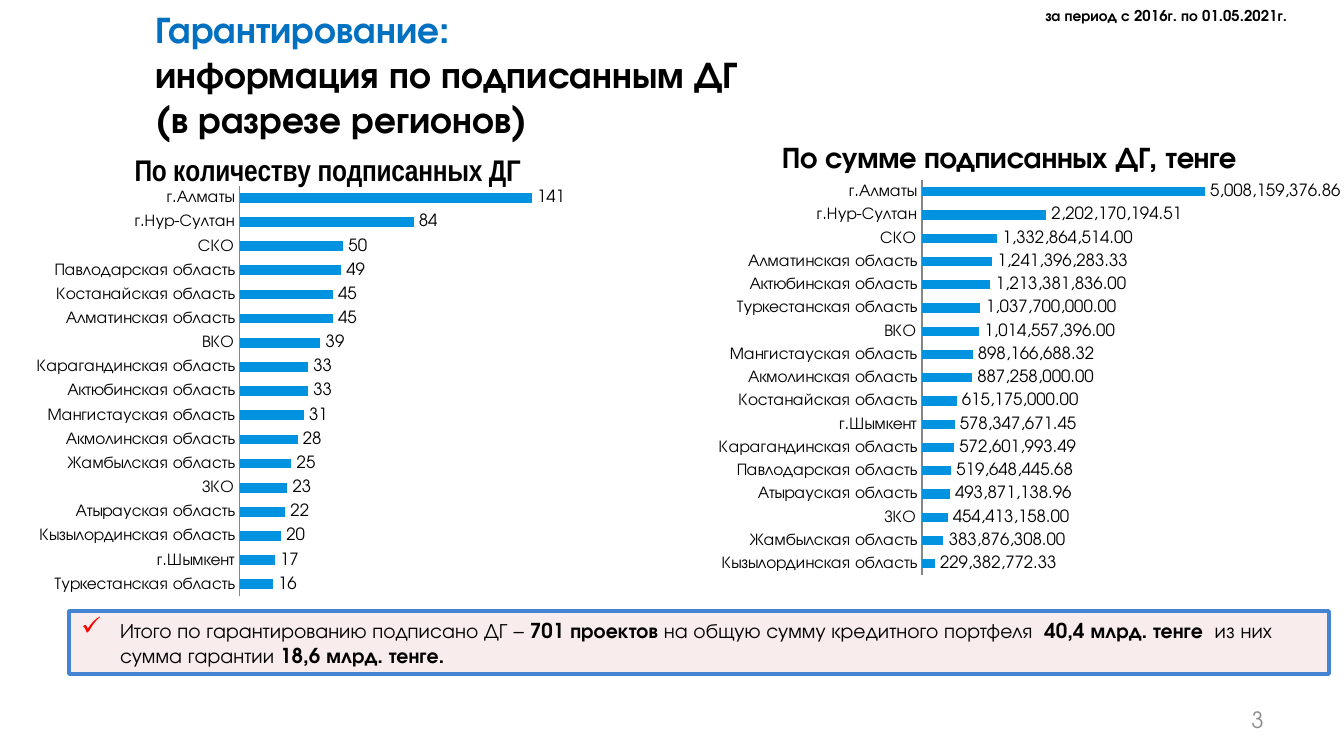
"""Build the slide on signed guarantee contracts by region."""
from lxml import etree
from pptx import Presentation
from pptx.chart.data import CategoryChartData as Data
from pptx.dml.color import RGBColor as RGB
from pptx.enum.chart import XL_CHART_TYPE as Kind, XL_LABEL_POSITION as Spot, XL_TICK_MARK as Tick
from pptx.enum.shapes import MSO_SHAPE as Form
from pptx.enum.text import MSO_ANCHOR as Anchor, PP_ALIGN as Align
from pptx.oxml import parse_xml
from pptx.oxml.ns import nsdecls, qn
from pptx.util import Pt

PX = 914400 / 134.4
FACE = "TeX Gyre Adventor"
HUES = {"text": "000000", "head": "0070C0", "bar": "0293E0", "axis": "868686",
        "fill": "F2DCDB", "edge": "4584D3", "tick": "FF0000", "page": "8C8C8C"}


def style(font, size, hue="text", bold=None, face=FACE):
    font.size, font.name, font.bold = Pt(size), face, bold
    font.color.rgb = RGB.from_string(HUES[hue])


def place(node, x, y, w=None, h=None):
    tags = '<c:layoutTarget val="inner"/>' if w else ""
    tags += '<c:xMode val="edge"/><c:yMode val="edge"/>'
    for tag, val in zip("xywh", (x, y, w, h)):
        if val is not None:
            tags += f'<c:{tag} val="{val}"/>'
    for old in node.findall(qn("c:layout")):
        node.remove(old)
    new = parse_xml(f'<c:layout {nsdecls("c")}><c:manualLayout>{tags}</c:manualLayout></c:layout>')
    text = node.find(qn("c:tx"))
    node.insert(0 if text is None else 1, new)


deck = Presentation()
deck.slide_width, deck.slide_height = int(1344 * PX), int(756 * PX)
slide = deck.slides.add_slide(deck.slide_layouts[6])
shapes = slide.shapes

page = shapes.add_textbox(*[int(n * PX) for n in (964, 700, 313, 40)]).text_frame
page.word_wrap, page.vertical_anchor = True, Anchor.MIDDLE
par = page.paragraphs[0]
par.text, par.alignment = "3", Align.RIGHT
style(par.font, 12, "page")

title = shapes.add_textbox(*[int(n * PX) for n in (142, 0, 1011, 86)]).text_frame
title.word_wrap = True
par = title.paragraphs[0]
style(par.font, 20, bold=True)
run = par.add_run()
run.text = "Гарантирование:"
run.font.color.rgb = RGB.from_string(HUES["head"])
par.add_line_break()
par.add_run().text = "информация по подписанным ДГ"
par = title.add_paragraph()
par.text = "(в разрезе регионов)"
style(par.font, 20, bold=True)

total = shapes.add_shape(Form.RECTANGLE, *[int(n * PX) for n in (69, 611, 1260, 63)])
total.shadow.inherit = False
total.fill.solid()
total.fill.fore_color.rgb = RGB.from_string(HUES["fill"])
tint = total.fill._xPr.find(".//" + qn("a:srgbClr"))
etree.SubElement(tint, qn("a:alpha")).set("val", "50000")
total.line.color.rgb = RGB.from_string(HUES["edge"])
total.line.width = Pt(2)
frame = total.text_frame
frame.word_wrap, frame.vertical_anchor = True, Anchor.MIDDLE
frame.margin_left = frame.margin_right = int(11 * PX)
frame.margin_top = frame.margin_bottom = int(5 * PX)
par = frame.paragraphs[0]
props = par._p.get_or_add_pPr()
props.set("marL", str(int(40 * PX)))
props.set("indent", str(int(-39 * PX)))
for tag in (f'buClr {nsdecls("a")}><a:srgbClr val="{HUES["tick"]}"/></a:buClr',
            f'buSzPct {nsdecls("a")} val="125000"/',
            f'buChar {nsdecls("a")} char="✓"/'):
    props.append(parse_xml(f"<a:{tag}>"))
par.alignment, par.space_after = Align.LEFT, Pt(6)
style(par.font, 11)
parts = ["Итого по гарантированию подписано ДГ – ", "701 проектов ",
         "на общую сумму кредитного портфеля  ", "40,4 млрд. тенге  ",
         "из них сумма гарантии ", "18,6 млрд. тенге."]
for i, part in enumerate(parts):
    run = par.add_run()
    run.text = part
    run.font.bold = i % 2 == 1
    run.font.color.rgb = RGB.from_string(HUES["text"])

date = shapes.add_textbox(*[int(n * PX) for n in (1032, 0, 281, 32)]).text_frame
date.word_wrap = False
par = date.paragraphs[0]
par.text = "за период с 2016г. по 01.05.2021г."
style(par.font, 8, bold=True)

counts = {
    "Туркестанская область": 16, "г.Шымкент": 17, "Кызылординская область": 20,
    "Атырауская область": 22, "ЗКО": 23, "Жамбылская область": 25,
    "Акмолинская область": 28, "Мангистауская область": 31, "Актюбинская область": 33,
    "Карагандинская область": 33, "ВКО": 39, "Алматинская область": 45,
    "Костанайская область": 45, "Павлодарская область": 49, "СКО": 50,
    "г.Нур-Султан": 84, "г.Алматы": 141}
sums = {
    "Кызылординская область": 229382772.33, "Жамбылская область": 383876308,
    "ЗКО": 454413158, "Атырауская область": 493871138.96,
    "Павлодарская область": 519648445.68, "Карагандинская область": 572601993.49,
    "г.Шымкент": 578347671.45, "Костанайская область": 615175000,
    "Акмолинская область": 887258000, "Мангистауская область": 898166688.32,
    "ВКО": 1014557396, "Туркестанская область": 1037700000,
    "Актюбинская область": 1213381836, "Алматинская область": 1241396283.33,
    "СКО": 1332864514, "г.Нур-Султан": 2202170194.51, "г.Алматы": 5008159376.86}

charts = [
    ("По количеству подписанных ДГ", "Arial Narrow", counts, (-16, 132, 691, 489),
     (0.21, 0.04), (0.37, 0.11, 0.48, 0.84), 160, "General"),
    ("По сумме подписанных ДГ, тенге", FACE, sums, (652, 132, 692, 482),
     (0.18, 0.01), (0.39, 0.1, 0.49, 0.82), 6e9, "#,##0.00")]
for name, face, rows, box, head, plot, top, form in charts:
    data = Data()
    data.categories = list(rows)
    data.add_series(name, list(rows.values()))
    chart = shapes.add_chart(Kind.BAR_CLUSTERED, *[int(n * PX) for n in box], data).chart
    style(chart.font, 9)
    chart.has_legend = False
    par = chart.chart_title.text_frame.paragraphs[0]
    run = par.add_run()
    run.text = name
    style(run.font, 16, bold=True, face=face)
    chart.chart_title.include_in_layout = False
    place(chart.chart_title._element, *head)
    place(chart._chartSpace.chart.plotArea, *plot)

    axis = chart.category_axis
    axis.major_tick_mark = axis.minor_tick_mark = Tick.NONE
    axis.format.line.color.rgb = RGB.from_string(HUES["axis"])
    scale = chart.value_axis
    scale.visible = scale.has_major_gridlines = False
    scale.minimum_scale, scale.maximum_scale = 0, top

    bars = chart.plots[0]
    bars.gap_width, bars.vary_by_categories = 150, False
    fill = bars.series[0].format.fill
    fill.solid()
    fill.fore_color.rgb = RGB.from_string(HUES["bar"])
    bars.has_data_labels = True
    tags = bars.data_labels
    tags.show_value, tags.position = True, Spot.OUTSIDE_END
    tags.number_format, tags.number_format_is_linked = form, False
    style(tags.font, 9)

deck.save("out.pptx")
